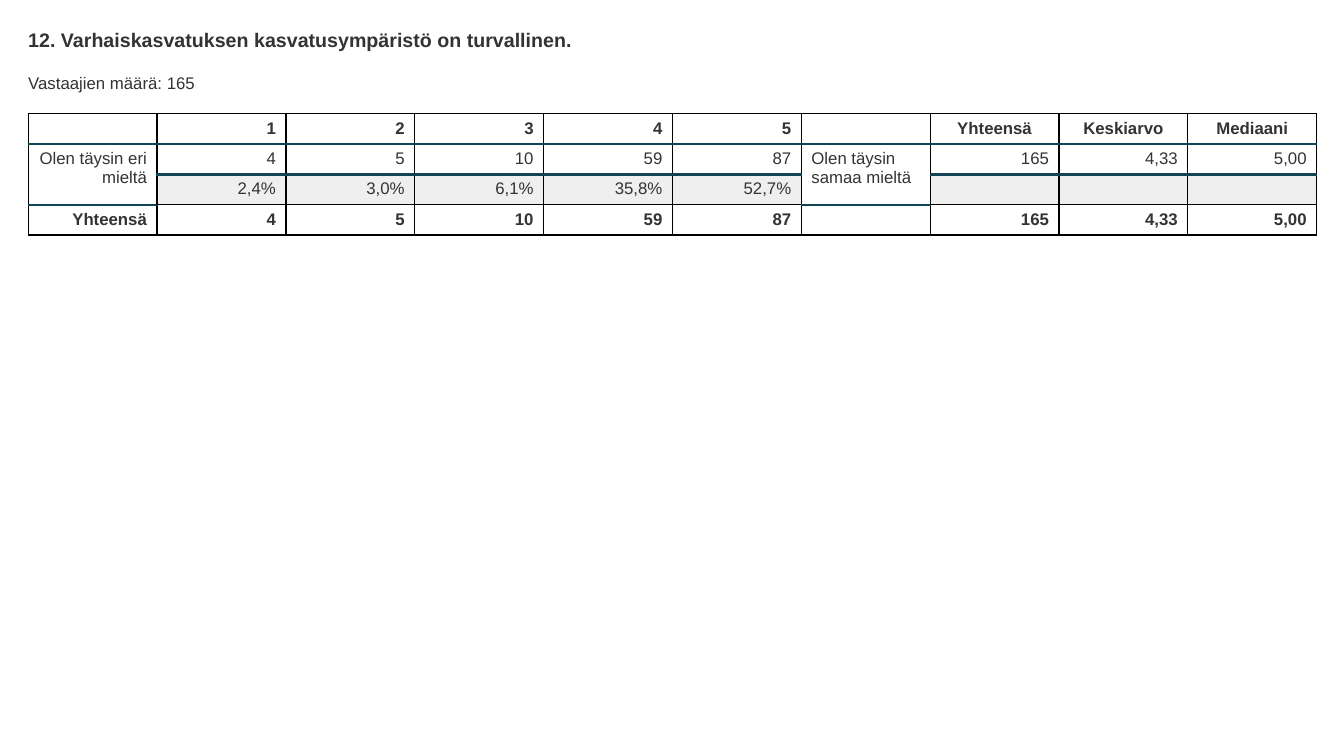
"""Build a slide with the survey results table for question 12."""
from lxml.etree import SubElement
from pptx import Presentation
from pptx.dml.color import RGBColor
from pptx.enum.text import PP_ALIGN
from pptx.oxml.ns import qn
from pptx.util import Inches, Pt

TEXT = RGBColor(0x33, 0x33, 0x33)
BLACK = RGBColor(0x00, 0x00, 0x00)
TEAL = RGBColor(0x12, 0x44, 0x56)
SHADE = RGBColor(0xEF, 0xEF, 0xEF)
WHITE = RGBColor(0xFF, 0xFF, 0xFF)

ROWS = [
    ["", "1", "2", "3", "4", "5", "", "Yhteensä", "Keskiarvo", "Mediaani"],
    ["Olen täysin eri mieltä", "4", "5", "10", "59", "87",
     "Olen täysin samaa mieltä", "165", "4,33", "5,00"],
    ["", "2,4%", "3,0%", "6,1%", "35,8%", "52,7%", "", "", "", ""],
    ["Yhteensä", "4", "5", "10", "59", "87", "", "165", "4,33", "5,00"],
]
LABEL_COLUMNS = (0, 6)
HEADER_ROW, COUNT_ROW, PERCENT_ROW, TOTAL_ROW = range(4)


def add_text(paragraph, text, size, bold):
    run = paragraph.add_run()
    run.text = text
    run.font.name = "Arial"
    run.font.size = Pt(size)
    run.font.bold = bold
    run.font.color.rgb = TEXT


def add_border(cell, side, color, width):
    line = SubElement(cell._tc.get_or_add_tcPr(), qn(f"a:ln{side}"), w=str(Pt(width)))
    fill = SubElement(line, qn("a:solidFill"))
    SubElement(fill, qn("a:srgbClr"), val=str(color))


presentation = Presentation()
presentation.slide_width = Inches(13.33)
presentation.slide_height = Inches(7.5)
slide = presentation.slides.add_slide(presentation.slide_layouts[6])

for text, top, height, size, bold in [
    ("12. Varhaiskasvatuksen kasvatusympäristö on turvallinen.", 0.28, 0.23, 14, True),
    ("Vastaajien määrä: 165", 0.72, 0.2, 12, False),
]:
    box = slide.shapes.add_textbox(Inches(0.28), Inches(top), Inches(12.78), Inches(height))
    frame = box.text_frame
    frame.word_wrap = True
    frame.margin_left = frame.margin_right = frame.margin_top = frame.margin_bottom = 0
    add_text(frame.paragraphs[0], text, size, bold)

table = slide.shapes.add_table(
    len(ROWS), len(ROWS[0]), Inches(0.28), Inches(1.13), Inches(12.78), Inches(1.2)
).table
table.first_row = False
table.horz_banding = False
for column in LABEL_COLUMNS:
    table.cell(COUNT_ROW, column).merge(table.cell(PERCENT_ROW, column))

for row, values in enumerate(ROWS):
    for column, text in enumerate(values):
        cell = table.cell(row, column)
        is_label = column in LABEL_COLUMNS
        paragraph = cell.text_frame.paragraphs[0]
        if row == HEADER_ROW and column > 6:
            paragraph.alignment = PP_ALIGN.CENTER
        elif column != 6:
            paragraph.alignment = PP_ALIGN.RIGHT
        if text:
            add_text(paragraph, text, 12, row in (HEADER_ROW, TOTAL_ROW))
        else:
            SubElement(paragraph._p, qn("a:endParaRPr"), sz="1200")

        bottom = PERCENT_ROW + 1 if cell.is_merge_origin else row + 1
        teal_edges = (1, 3) if is_label else (1, 2)
        add_border(cell, "L", BLACK, 1)
        add_border(cell, "R", BLACK, 1)
        for side, edge in (("T", row), ("B", bottom)):
            if edge in teal_edges:
                add_border(cell, side, TEAL, 2)
            else:
                add_border(cell, side, BLACK, 1)
        cell.fill.solid()
        shaded = row == PERCENT_ROW and not is_label
        cell.fill.fore_color.rgb = SHADE if shaded else WHITE

presentation.save("out.pptx")
